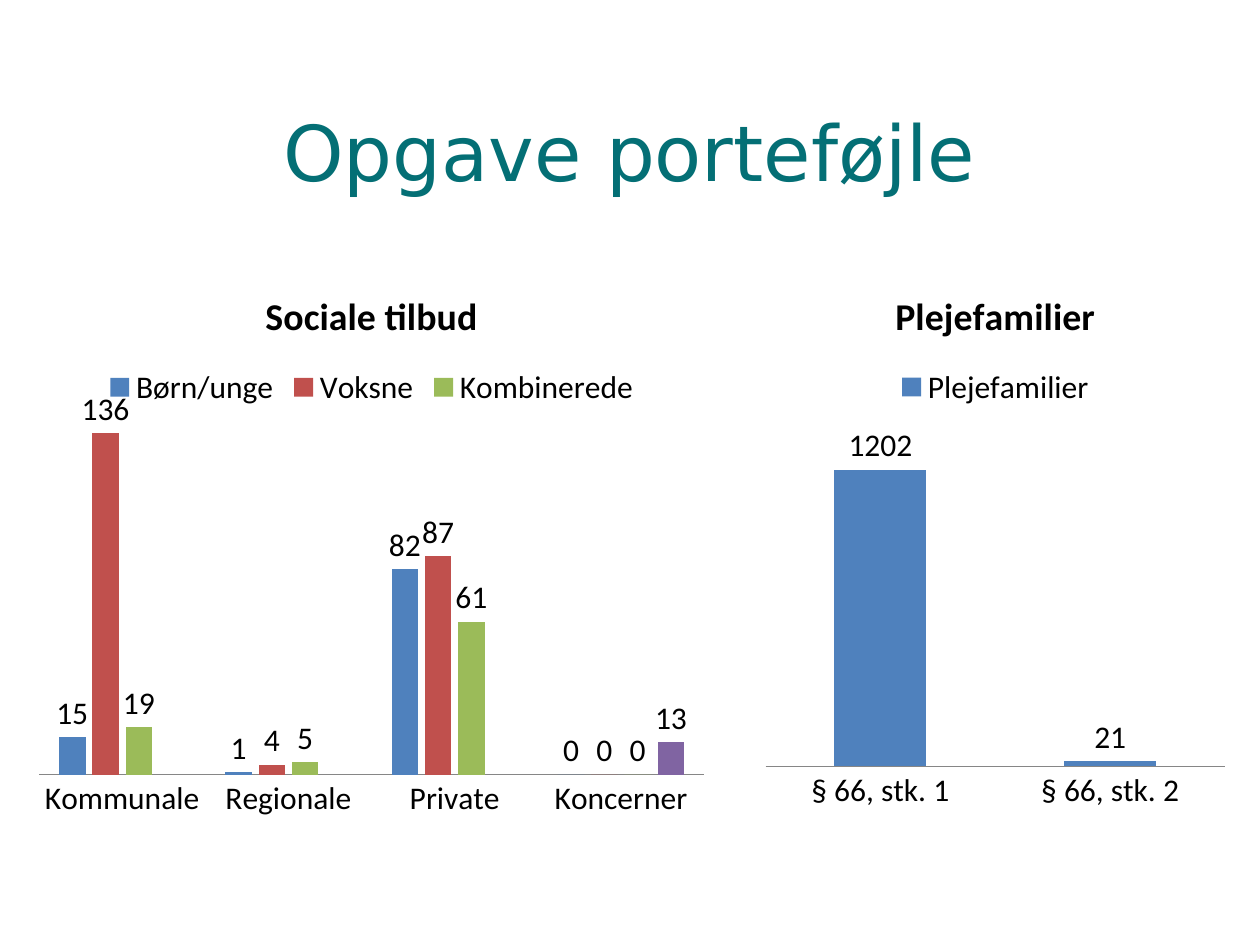
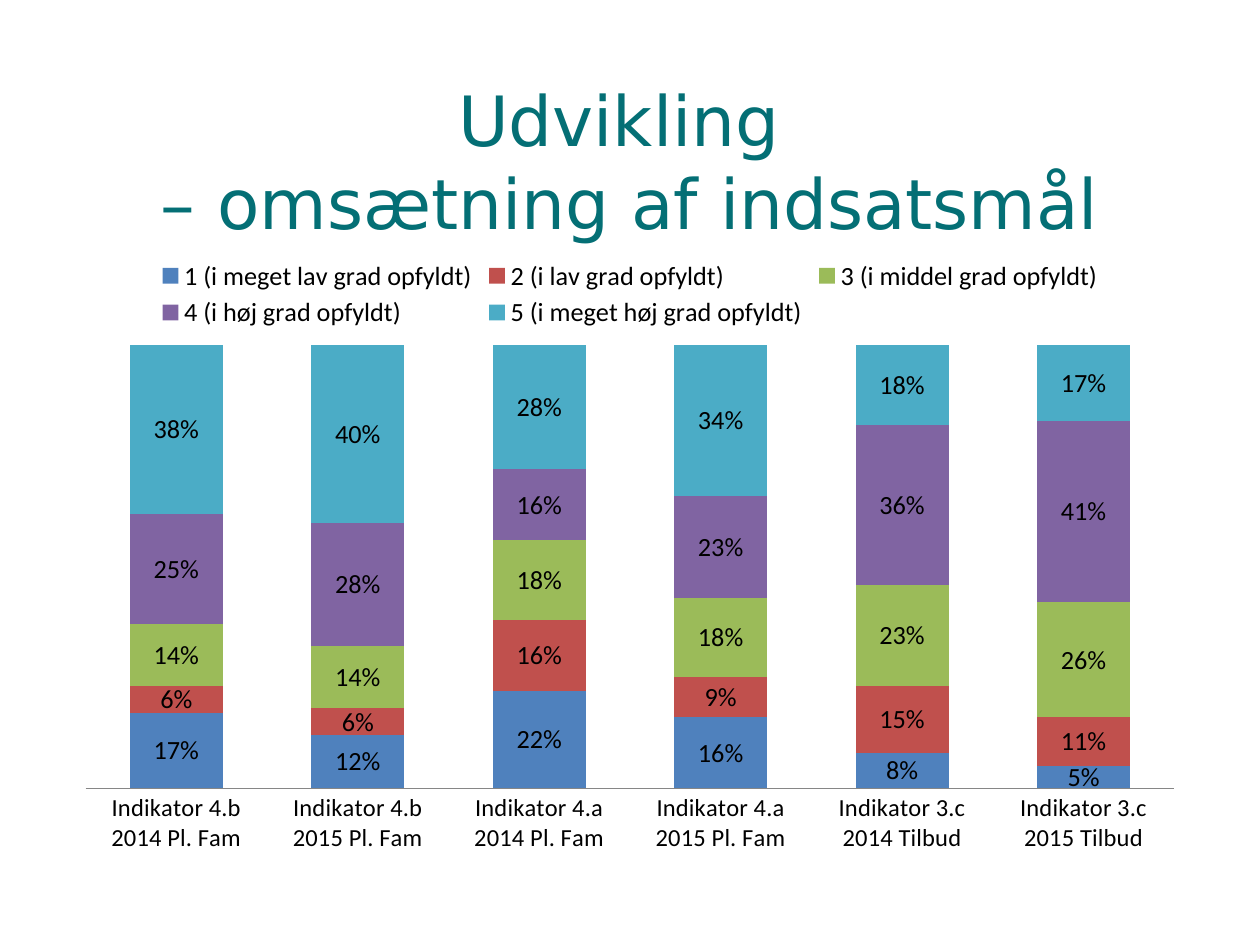
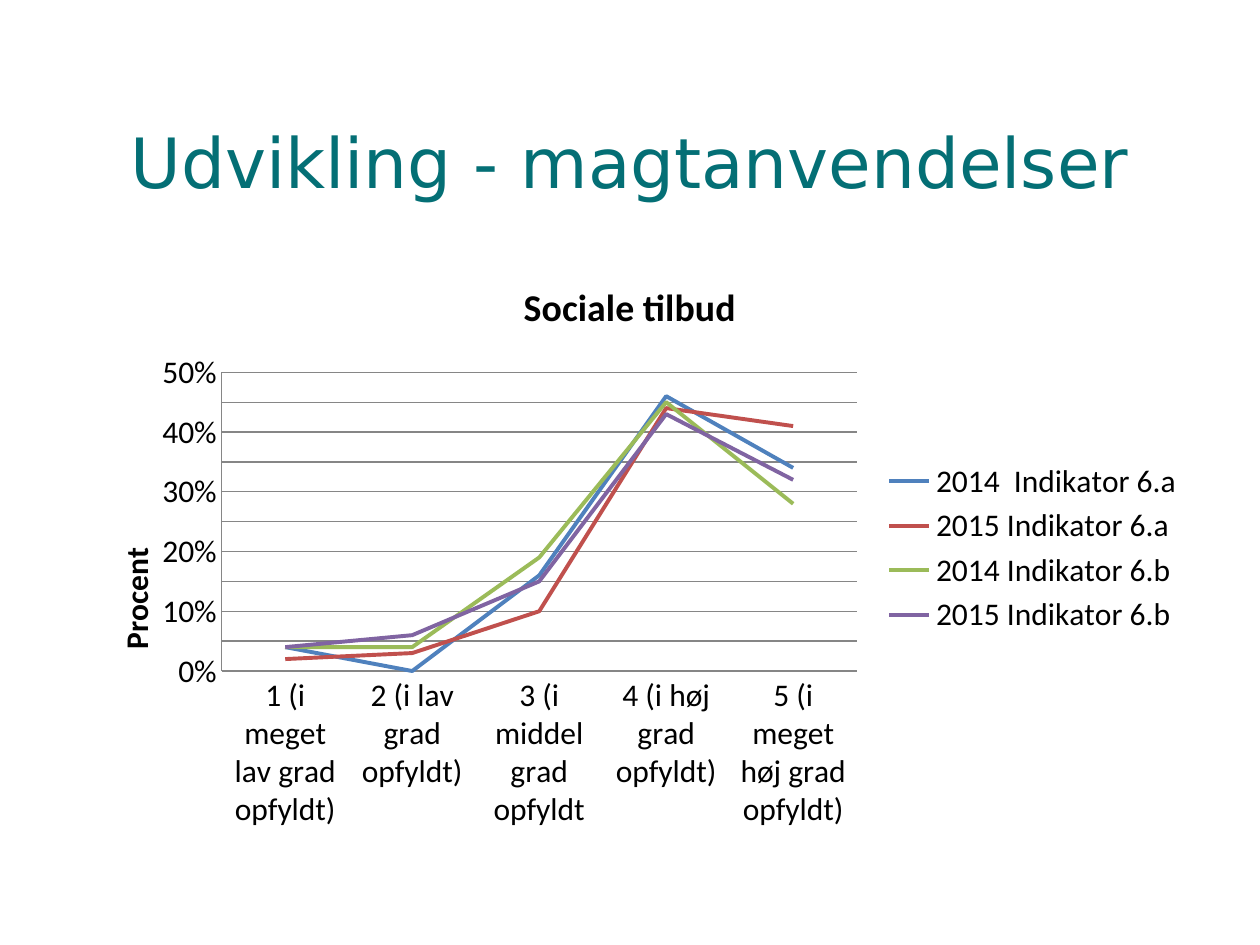
from lxml import etree
from pptx import Presentation
from pptx import util as u
from pptx.chart.data import CategoryChartData
from pptx.dml.color import RGBColor
from pptx.enum import chart as ch
from pptx.enum import text
from pptx.oxml.ns import qn

WIDTH, HEIGHT = u.Inches(10), u.Inches(7.5)
TEAL = RGBColor(0x04, 0x6F, 0x75)
BLACK = RGBColor(0, 0, 0)
GREY = RGBColor(0x86, 0x86, 0x86)
SERIES_COLOURS = [
    RGBColor(0x4F, 0x81, 0xBD),
    RGBColor(0xC0, 0x50, 0x4D),
    RGBColor(0x9B, 0xBB, 0x59),
    RGBColor(0x80, 0x64, 0xA2),
    RGBColor(0x4B, 0xAC, 0xC6),
]
TITLE_FONT, CHART_FONT = "DejaVu Sans", "Calibri"

GRADES = [
    "1 (i meget lav grad opfyldt)",
    "2 (i lav grad opfyldt)",
    "3 (i middel grad opfyldt)",
    "4 (i høj grad opfyldt)",
    "5 (i meget høj grad opfyldt)",
]


def add_slide(prs, title, size, top):
    """Add a blank slide with a centred title; top is a share of the height."""
    slide = prs.slides.add_slide(prs.slide_layouts[6])
    box = slide.shapes.add_textbox(*place((0.05, top, 0.9, 0.16)))
    tf = box.text_frame
    tf.word_wrap = True
    tf.vertical_anchor = text.MSO_ANCHOR.MIDDLE
    tf.text = title
    p = tf.paragraphs[0]
    p.alignment = text.PP_ALIGN.CENTER
    for r in p.runs:
        set_font(r.font, size, TITLE_FONT, TEAL)
    return slide


def place(box):
    """Turn shares of the slide (left, top, width, height) into lengths."""
    return [int(share * side) for share, side in zip(box, (WIDTH, HEIGHT) * 2)]


def set_font(font, size, name=CHART_FONT, colour=BLACK, bold=False):
    font.size = u.Pt(size)
    font.name = name
    font.bold = bold
    font.color.rgb = colour


def set_layout(parent, index, inner=False, **shares):
    """Fix a chart part at shares (x, y, w, h) of the chart's box."""
    for old in parent.findall(qn("c:layout")):
        parent.remove(old)
    layout = etree.Element(qn("c:layout"))
    manual = etree.SubElement(layout, qn("c:manualLayout"))
    values = {"layoutTarget": "inner"} if inner else {}
    values.update(xMode="edge", yMode="edge", **shares)
    for tag, value in values.items():
        etree.SubElement(manual, qn(f"c:{tag}")).set("val", str(value))
    parent.insert(index, layout)


def set_title(owner, wording, size, **position):
    """Title a chart or an axis, at a position given as shares of the chart."""
    owner.has_title = True
    title = owner.chart_title if hasattr(owner, "chart_title") else owner.axis_title
    tf = title.text_frame
    tf.text = wording
    set_font(tf.paragraphs[0].runs[0].font, size, bold=True)
    if position:
        set_layout(tf._txBody.getparent().getparent(), 1, **position)
    return tf


def add_chart(slide, kind, box, categories, series, plot_box, size=18,
              title=None, number_format="General", legend=ch.XL_LEGEND_POSITION.TOP):
    """Add a chart with the shared look; plot_box is in shares of its box."""
    data = CategoryChartData(number_format=number_format)
    data.categories = categories
    for name, values in series:
        data.add_series(name, values)
    chart = slide.shapes.add_chart(kind, *place(box), data).chart
    set_font(chart.font, size)
    chart.has_title = False
    if title:
        set_title(chart, title, 1.2 * size)
    chart.has_legend = True
    chart.legend.position = legend
    chart.legend.include_in_layout = False
    set_layout(chart._chartSpace.chart.plotArea, 0, inner=True,
               **dict(zip("xywh", plot_box)))
    chart.plots[0].vary_by_categories = False
    for axis in (chart.category_axis, chart.value_axis):
        axis.major_tick_mark = axis.minor_tick_mark = ch.XL_TICK_MARK.NONE
        axis.format.line.color.rgb = GREY
        axis.format.line.width = u.Pt(0.75)
    return chart


def add_columns(slide, kind, box, *args, maximum, gap=150, overlap=-25, **options):
    """Add labelled columns without a value axis."""
    chart = add_chart(slide, kind, box, *args, **options)
    axis = chart.value_axis
    axis.visible = axis.has_major_gridlines = False
    axis.minimum_scale, axis.maximum_scale = 0, maximum
    plot = chart.plots[0]
    plot.gap_width, plot.overlap = gap, overlap
    for series, colour in zip(plot.series, SERIES_COLOURS):
        series.format.fill.solid()
        series.format.fill.fore_color.rgb = colour
        series.data_labels.show_value = True
    return chart


def hide_legend_entry(chart, index):
    entry = etree.Element(qn("c:legendEntry"))
    etree.SubElement(entry, qn("c:idx")).set("val", str(index))
    etree.SubElement(entry, qn("c:delete")).set("val", "1")
    chart.legend._element.insert(1, entry)


def portfolio_slide(prs):
    slide = add_slide(prs, "Opgave porteføjle", 44, 0.08)
    kind = ch.XL_CHART_TYPE.COLUMN_CLUSTERED
    plot_box = (0.02, 0.28, 0.96, 0.62)
    offers = add_columns(
        slide, kind, (0.02, 0.28, 0.55, 0.6),
        ["Kommunale", "Regionale", "Private", "Koncerner"],
        [("Børn/unge", (15, 1, 82, 0)),
         ("Voksne", (136, 4, 87, 0)),
         ("Kombinerede", (19, 5, 61, 0)),
         ("Series 4", (None, None, None, 13))],
        plot_box, title="Sociale tilbud", maximum=140)
    hide_legend_entry(offers, 3)
    add_columns(
        slide, kind, (0.6, 0.28, 0.38, 0.59),
        ["§ 66, stk. 1", "§ 66, stk. 2"], [("Plejefamilier", (1202, 21))],
        plot_box, title="Plejefamilier", maximum=1400)


def goals_slide(prs):
    slide = add_slide(prs, "Udvikling \v– omsætning af indsatsmål", 39.6, 0.09)
    shares = [
        (0.17, 0.12, 0.22, 0.16, 0.08, 0.05),
        (0.06, 0.06, 0.16, 0.09, 0.15, 0.11),
        (0.14, 0.14, 0.18, 0.18, 0.23, 0.26),
        (0.25, 0.28, 0.16, 0.23, 0.36, 0.41),
        (0.38, 0.4, 0.28, 0.34, 0.18, 0.17),
    ]
    groups = [("4.b", "Pl. Fam"), ("4.a", "Pl. Fam"), ("3.c", "Tilbud")]
    categories = [f"Indikator {indicator} {year} {group}"
                  for indicator, group in groups for year in (2014, 2015)]
    chart = add_columns(
        slide, ch.XL_CHART_TYPE.COLUMN_STACKED_100, (0.05, 0.26, 0.9, 0.66),
        categories, list(zip(GRADES, shares)), (0.02, 0.16, 0.96, 0.71),
        size=15, number_format="0%", maximum=1, gap=95, overlap=100)
    set_font(chart.category_axis.tick_labels.font, 14)


def force_slide(prs):
    slide = add_slide(prs, "Udvikling - magtanvendelser", 39.6, 0.09)
    categories = [g.rstrip(")") if g.startswith("3") else g for g in GRADES]
    chart = add_chart(
        slide, ch.XL_CHART_TYPE.LINE, (0.05, 0.27, 0.9, 0.62), categories,
        [("2014  Indikator 6.a", (0.04, 0, 0.16, 0.46, 0.34)),
         ("2015 Indikator 6.a", (0.02, 0.03, 0.1, 0.44, 0.41)),
         ("2014 Indikator 6.b", (0.04, 0.04, 0.19, 0.45, 0.28)),
         ("2015 Indikator 6.b", (0.04, 0.06, 0.15, 0.43, 0.32))],
        (0.14, 0.2, 0.56, 0.51), title="Sociale tilbud", number_format="0%",
        legend=ch.XL_LEGEND_POSITION.RIGHT)
    axis = chart.value_axis
    axis.minimum_scale, axis.maximum_scale, axis.major_unit = 0, 0.5, 0.05
    axis.major_gridlines.format.line.color.rgb = GREY
    tf = set_title(axis, "Procent", 18, x=0.04, y=0.49)
    tf._txBody.bodyPr.set("rot", "-5400000")
    for series, colour in zip(chart.plots[0].series, SERIES_COLOURS):
        series.smooth = False
        series.marker.style = ch.XL_MARKER_STYLE.NONE
        series.format.line.color.rgb = colour
        series.format.line.width = u.Pt(2.25)


def main():
    prs = Presentation()
    prs.slide_width, prs.slide_height = WIDTH, HEIGHT
    portfolio_slide(prs)
    goals_slide(prs)
    force_slide(prs)
    prs.save("out.pptx")


if __name__ == "__main__":
    main()
